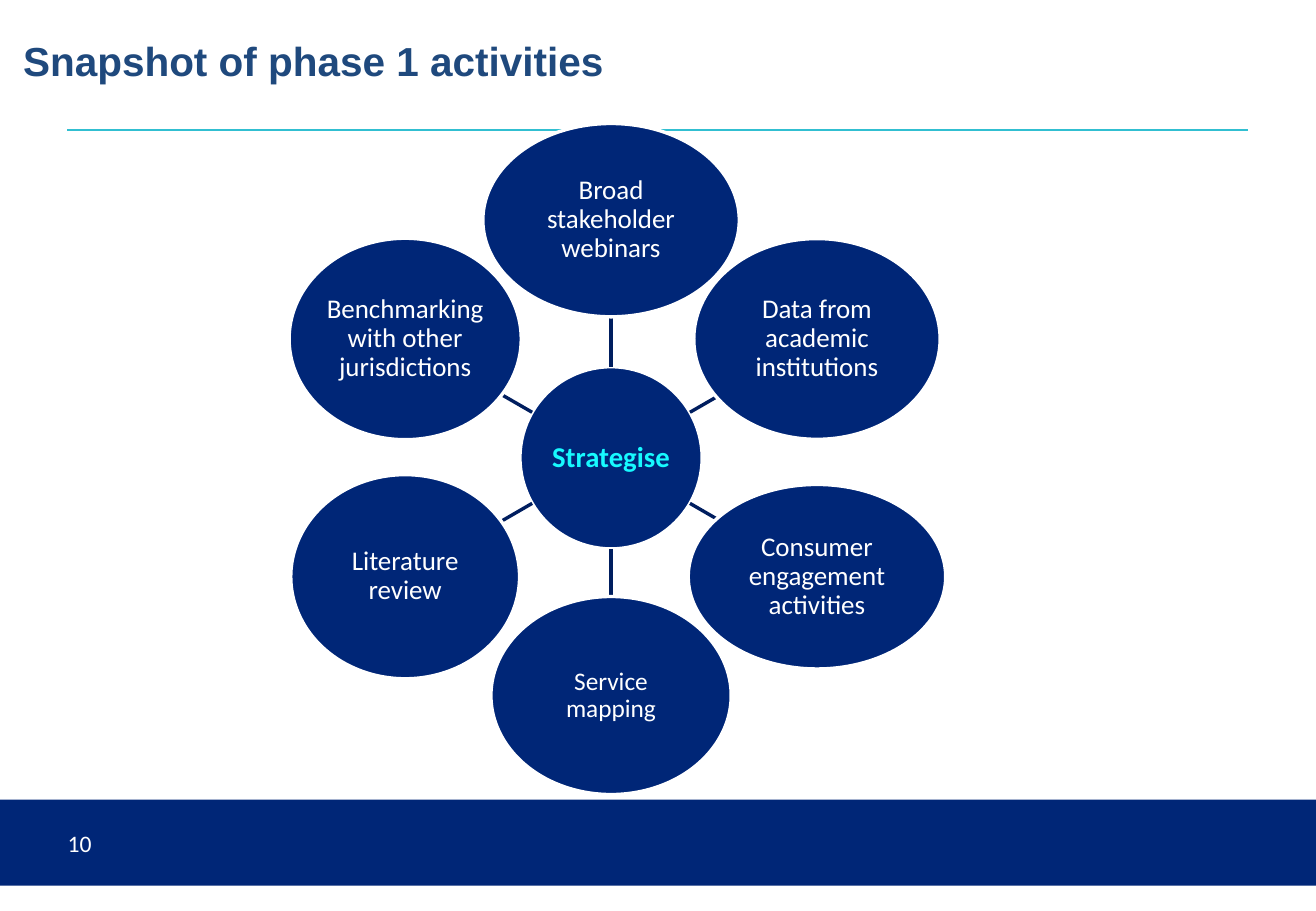
import math

import pptx
import pptx.dml.color
import pptx.enum.shapes
import pptx.enum.text
import pptx.oxml
import pptx.util
from lxml import etree

Pt = pptx.util.Pt
Shape = pptx.enum.shapes.MSO_SHAPE
Align = pptx.enum.text.PP_ALIGN
Anchor = pptx.enum.text.MSO_ANCHOR

COLORS = {
    "navy": "002677",
    "spoke": "001E5F",
    "teal": "31BFD1",
    "cyan": "17F9FF",
    "title": "1F497D",
    "white": "FFFFFF",
}

HUB = (362.2, 271.4)
RADIUS = 54
ORBIT = 140.9
NODES = [
    ("Broad stakeholder webinars", 152, 114.6, 16),
    ("Data from academic institutions", 146, 119, 16),
    ("Consumer engagement activities", 152.6, 109.4, 16),
    ("Service mapping", 142.4, 117.4, 15),
    ("Literature review", 135.6, 121, 16),
    ("Benchmarking with other jurisdictions", 137.6, 119.4, 16),
]


def color(name):
    return pptx.dml.color.RGBColor.from_string(COLORS[name])


def write(shape, text, size, ink, font="Calibri", bold=False,
          align=Align.LEFT, anchor=Anchor.MIDDLE, inset=None, space=None):
    frame = shape.text_frame
    frame.word_wrap = True
    frame.auto_size = pptx.enum.text.MSO_AUTO_SIZE.NONE
    frame.vertical_anchor = anchor
    if inset is not None:
        frame.margin_left = frame.margin_right = Pt(inset)
        frame.margin_top = frame.margin_bottom = Pt(inset)
    para = frame.paragraphs[0]
    para.alignment = align
    if space:
        para.line_spacing = space
    run = para.add_run()
    run.text = text
    run.font.name = font
    run.font.size = Pt(size)
    run.font.bold = bold
    run.font.color.rgb = color(ink)


class Deck:
    def __init__(self, width, height):
        self.file = pptx.Presentation()
        self.file.slide_width = Pt(width)
        self.file.slide_height = Pt(height)
        self.slide = None

    def start(self):
        self.slide = self.file.slides.add_slide(self.file.slide_layouts[5])

    def title(self, text, box):
        head = self.slide.shapes.title
        head.left, head.top, head.width, head.height = map(Pt, box)
        write(head, text, 24, "title", font="Arial", bold=True,
              anchor=Anchor.BOTTOM)

    def shape(self, kind, box, edge=None):
        item = self.slide.shapes.add_shape(kind, *map(Pt, box))
        item.shadow.inherit = False
        item.fill.solid()
        item.fill.fore_color.rgb = color("navy")
        if edge:
            item.line.color.rgb = color(edge)
            item.line.width = Pt(2)
        else:
            item.line.fill.background()
        return item

    def line(self, start, end, ink, width):
        item = self.slide.shapes.add_connector(
            pptx.enum.shapes.MSO_CONNECTOR.STRAIGHT, *map(Pt, start + end))
        item.line.color.rgb = color(ink)
        item.line.width = Pt(width)
        etree.SubElement(item.element.spPr, pptx.oxml.ns.qn("a:effectLst"))

    def label(self, text, box, size, ink):
        write(self.slide.shapes.add_textbox(*map(Pt, box)), text, size, ink)

    def bubble(self, text, center, width, height, size, ink="white", bold=False):
        left, top = center[0] - width / 2, center[1] - height / 2
        item = self.shape(Shape.OVAL, (left, top, width, height), "white")
        write(item, text, size, ink, bold=bold, align=Align.CENTER,
              inset=1, space=0.9)


def polar(angle, reach):
    return HUB[0] + reach * math.cos(angle), HUB[1] + reach * math.sin(angle)


def main():
    deck = Deck(780, 540)
    deck.start()
    deck.shape(Shape.RECTANGLE, (0, 474, 780, 51))
    deck.line((40, 77), (740, 77), "teal", 1)
    deck.title("Snapshot of phase 1 activities", (6.5, -2, 773.5, 55.5))
    deck.label("10", (33, 485.5, 216, 29), 14, "white")

    deck.bubble("Strategise", HUB, 2 * RADIUS, 2 * RADIUS, 17, "cyan", True)
    for index, (text, width, height, size) in enumerate(NODES):
        angle = math.radians(index * 360 / len(NODES) - 90)
        edge = 1 / math.hypot(2 * math.cos(angle) / width,
                              2 * math.sin(angle) / height)
        deck.line(polar(angle, RADIUS), polar(angle, ORBIT - edge), "spoke", 2)
        deck.bubble(text, polar(angle, ORBIT), width, height, size)

    deck.file.save("out.pptx")


if __name__ == "__main__":
    main()
